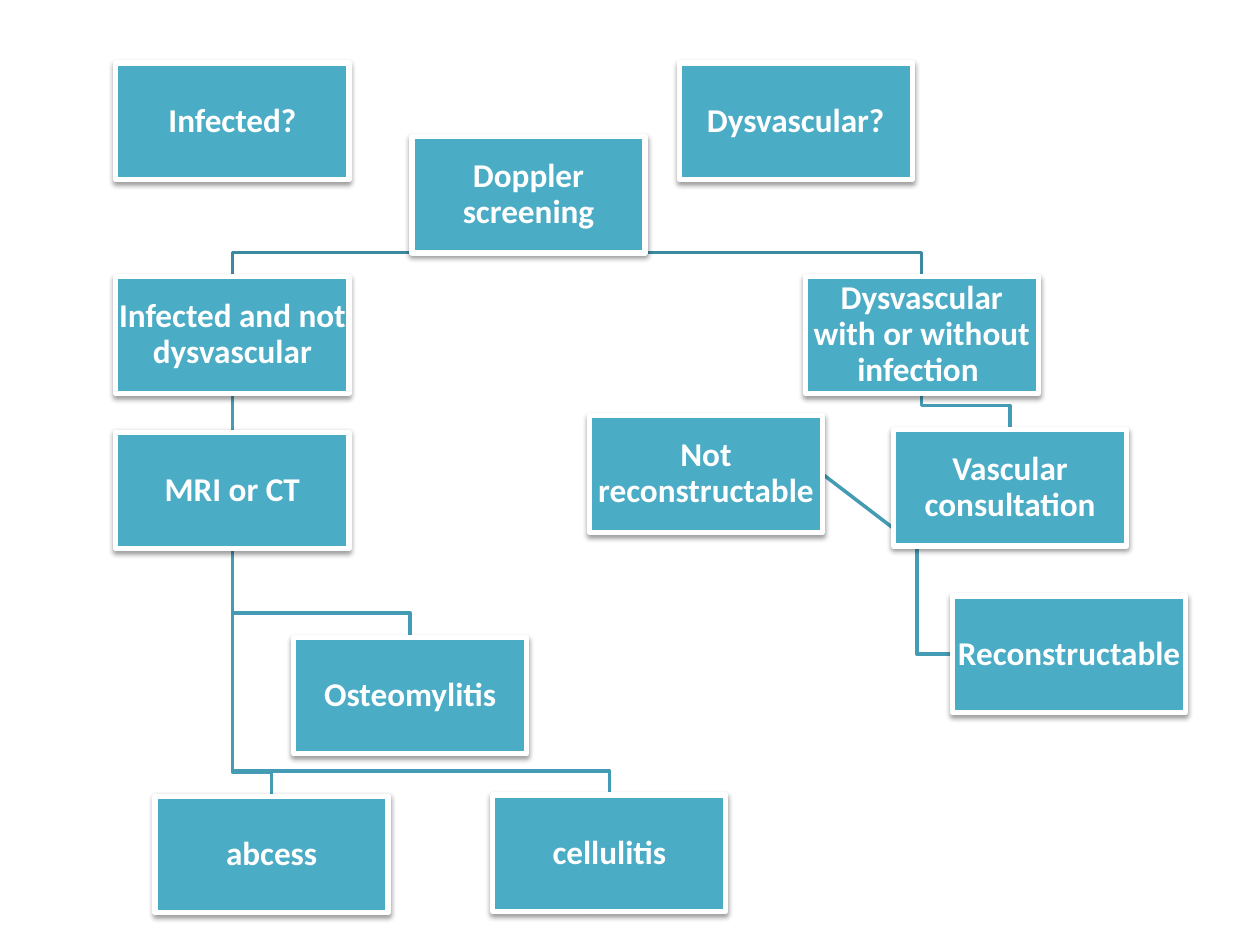
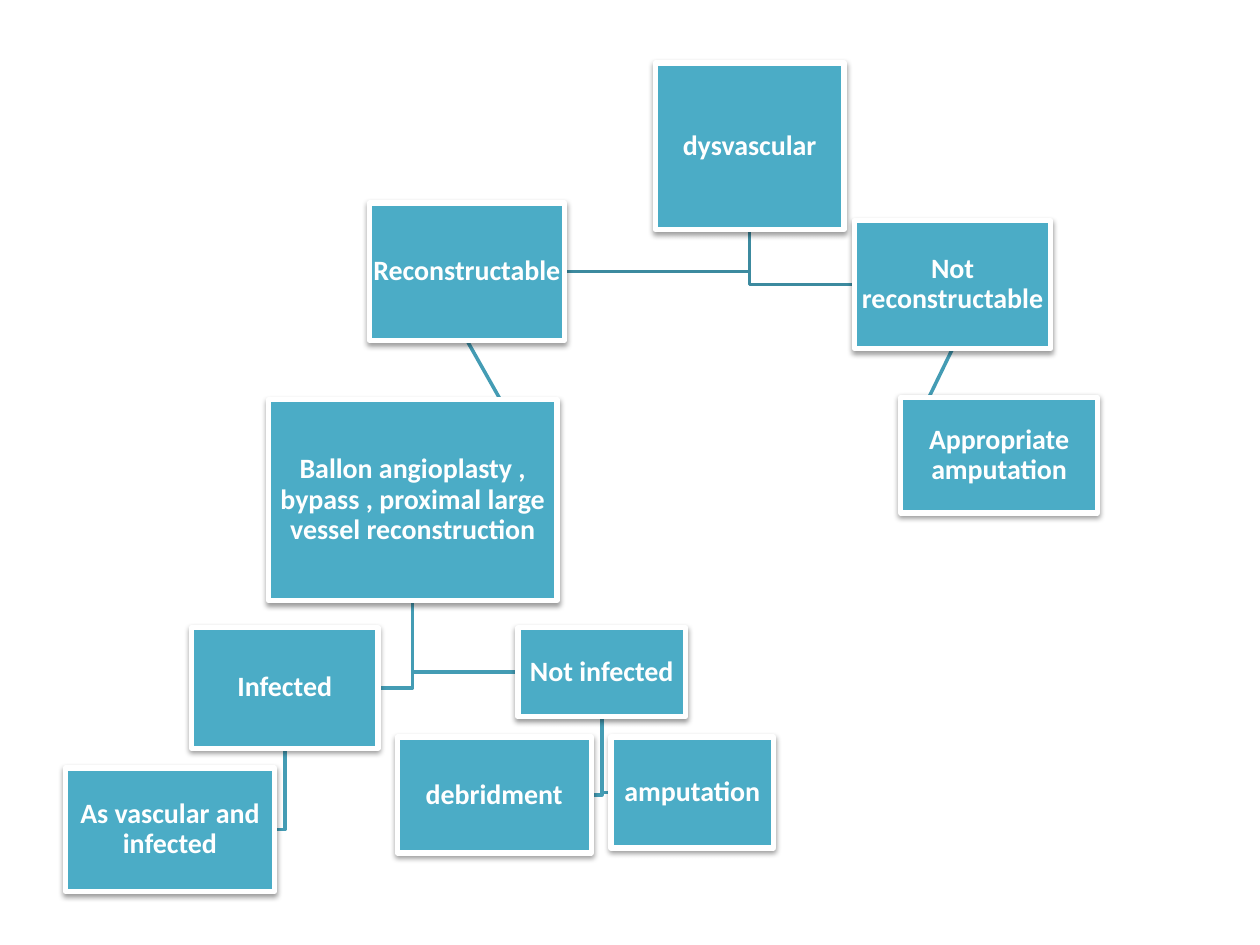
from lxml import etree
from pptx import Presentation
from pptx.dml.color import RGBColor
from pptx.enum.shapes import MSO_CONNECTOR, MSO_SHAPE
from pptx.enum.text import MSO_ANCHOR, PP_ALIGN
from pptx.oxml.ns import qn
from pptx.util import Pt

RECT = MSO_SHAPE.RECTANGLE
STRAIGHT = MSO_CONNECTOR.STRAIGHT
MIDDLE = MSO_ANCHOR.MIDDLE
CENTER = PP_ALIGN.CENTER

HUES = {"box": "4BACC6", "edge": "FFFFFF", "text": "FFFFFF",
        "root": "3C8A9F", "link": "449CB4", "shade": "000000"}
FONT = "Calibri"
PAD = Pt(0.8)
RISE = Pt(13.8)  # height of a drop link's last leg
LEFT, BOTTOM, RIGHT, TOP = 1, 2, 3, 0

WIDE, HIGH = 133.2, 66.6  # every box of the screening chart
SCREEN = {
    "Infected?": (66.2, 36),
    "Dysvascular?": (388.1, 36),
    "Doppler screening": (235.4, 78),
    "Infected and not dysvascular": (66.2, 158.2),
    "MRI or CT": (66.2, 247),
    "Osteomylitis": (167.8, 364.2),
    "cellulitis": (281.6, 454.3),
    "abcess": (88.6, 455),
    "Dysvascular with or without infection ": (460.1, 158.2),
    "Vascular consultation": (510.6, 245.5),
    "Reconstructable": (544.3, 340.6),
    "Not reconstructable": (336.8, 237.6),
}
SCREEN_DROPS = [
    ("Doppler screening", "Infected and not dysvascular"),
    ("Doppler screening", "Dysvascular with or without infection "),
    ("MRI or CT", "Osteomylitis"),
    ("MRI or CT", "cellulitis"),
    ("Infected and not dysvascular", "abcess"),
    ("Dysvascular with or without infection ", "Vascular consultation"),
]

TREAT = {
    "dysvascular": (374.4, 36, 108, 95.2),
    "Reconstructable": (211, 116, 111.6, 78.5),
    "Ballon angioplasty , bypass , proximal large vessel reconstruction":
        (153.4, 228.2, 164.9, 115),
    "Infected": (109.4, 358.6, 106.6, 69),
    "As vascular and infected": (37.4, 438.8, 119.5, 70.6),
    "Not infected": (296, 358.6, 95.8, 51),
    "debridment": (227, 421.2, 110.9, 66.2),
    "amputation": (349.2, 421.2, 92.9, 63.4),
    "Not reconstructable": (488.2, 126.2, 112.3, 73),
    "Appropriate amputation": (514.8, 227, 112.3, 66.2),
}
BALLON = "Ballon angioplasty , bypass , proximal large vessel reconstruction"
TREAT_SIDES = [
    ("dysvascular", "Reconstructable"),
    ("dysvascular", "Not reconstructable"),
    (BALLON, "Infected"),
    (BALLON, "Not infected"),
    ("Infected", "As vascular and infected"),
    ("Not infected", "debridment"),
    ("Not infected", "amputation"),
]


def hue(name):
    return RGBColor.from_string(HUES[name])


def write(shape, text, size=19, color="text", bold=True, align=CENTER):
    frame = shape.text_frame
    frame.word_wrap = True
    frame.vertical_anchor = MIDDLE
    frame.margin_left = frame.margin_right = PAD
    frame.margin_top = frame.margin_bottom = PAD
    para = frame.paragraphs[0]
    para.alignment = align
    para.line_spacing = 0.9
    run = para.add_run()
    run.text = text
    run.font.name = FONT
    run.font.size = Pt(size)
    run.font.bold = bold
    run.font.color.rgb = hue(color)


def shade(shape):
    """Give the shape a soft shadow straight below it."""
    shape.shadow.inherit = False
    effects = shape.element.spPr.find(qn("a:effectLst"))
    outer = etree.SubElement(effects, qn("a:outerShdw"), blurRad=str(Pt(3.1)),
                             dist=str(Pt(1.6)), dir="5400000", rotWithShape="0")
    color = etree.SubElement(outer, qn("a:srgbClr"), val=HUES["shade"])
    etree.SubElement(color, qn("a:alpha"), val="38000")


def add_box(slide, text, left, top, width, height, size):
    box = slide.shapes.add_shape(RECT, Pt(left), Pt(top), Pt(width), Pt(height))
    box.fill.solid()
    box.fill.fore_color.rgb = hue("box")
    box.line.color.rgb = hue("edge")
    box.line.width = Pt(3)
    shade(box)
    write(box, text, size=size)
    return box


def style(slide, link, color):
    """Set the link's line and send it behind the boxes."""
    link.line.color.rgb = hue(color)
    link.line.width = Pt(2)
    slide.shapes.element.insert(2, link.element)


def add_path(slide, points, color):
    pen = slide.shapes.build_freeform(*points[0])
    pen.add_line_segments(points[1:], close=False)
    path = pen.convert_to_shape()
    path.fill.background()
    path.shadow.inherit = False
    style(slide, path, color)


def foot(box, share=0.5):
    """Point on the bottom side, at a share of the width."""
    return int(box.left + box.width * share), box.top + box.height


def add_drop(slide, start, end, color="link"):
    """Link a bottom side down, across and down to a top side."""
    x, y = foot(start)
    mid = end.left + end.width // 2
    bend = end.top - RISE
    add_path(slide, [(x, y), (x, bend), (mid, bend), (mid, end.top)], color)


def add_side(slide, start, end, color="link", share=0.5):
    """Link a bottom side down and across to the nearer side of a box."""
    x, y = foot(start, share)
    mid = end.top + end.height // 2
    edge = end.left if end.left > x else end.left + end.width
    add_path(slide, [(x, y), (x, mid), (edge, mid)], color)


def add_line(slide, start, end, side, share=None):
    """Join a bottom side to a side of a box; share moves the start off centre."""
    point = foot(start, share or 0.5)
    line = slide.shapes.add_connector(STRAIGHT, *point, *point)
    if share is None:
        line.begin_connect(start, BOTTOM)
    line.end_connect(end, side)
    etree.SubElement(line.element.spPr, qn("a:effectLst"))
    style(slide, line, "link")


def draw_screen(slide):
    boxes = {text: add_box(slide, text, *spot, WIDE, HIGH, 19)
             for text, spot in SCREEN.items()}
    for start, end in SCREEN_DROPS:
        color = "root" if start == "Doppler screening" else "link"
        add_drop(slide, boxes[start], boxes[end], color)
    add_line(slide, boxes["Infected and not dysvascular"], boxes["MRI or CT"], TOP)
    consult = boxes["Vascular consultation"]
    add_side(slide, consult, boxes["Reconstructable"], share=0.1)
    add_line(slide, consult, boxes["Not reconstructable"], RIGHT, share=0.1)


def draw_treat(slide):
    boxes = {text: add_box(slide, text, *area, 16)
             for text, area in TREAT.items()}
    for start, end in TREAT_SIDES:
        color = "root" if start == "dysvascular" else "link"
        add_side(slide, boxes[start], boxes[end], color)
    add_line(slide, boxes["Reconstructable"], boxes[BALLON], RIGHT)
    add_line(slide, boxes["Not reconstructable"],
             boxes["Appropriate amputation"], LEFT)


def main():
    deck = Presentation()
    deck.slide_width, deck.slide_height = Pt(720), Pt(540)
    blank = deck.slide_layouts[6]
    for draw in (draw_screen, draw_treat):
        draw(deck.slides.add_slide(blank))
    deck.save("out.pptx")


if __name__ == "__main__":
    main()
